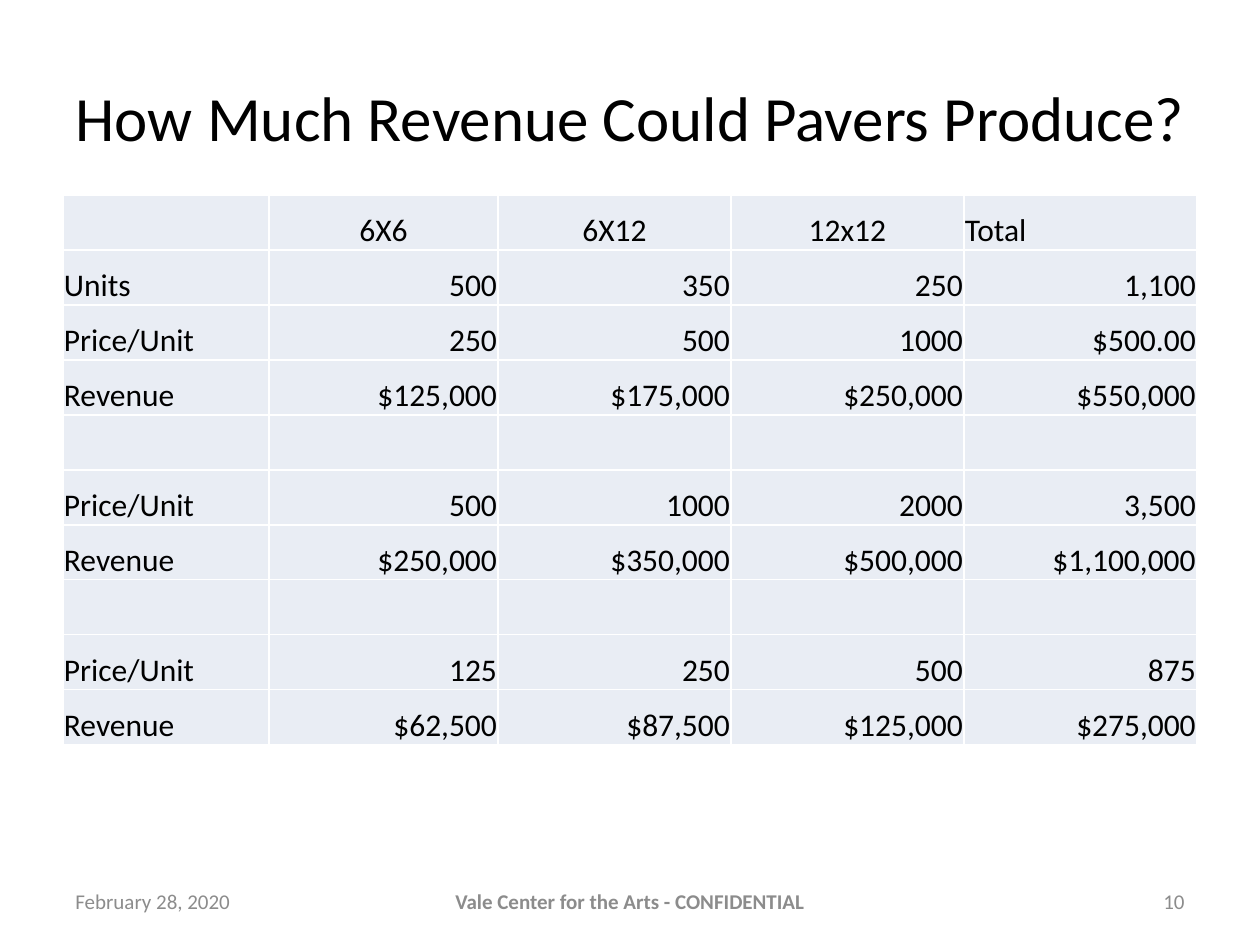
from lxml.etree import SubElement
from pptx import Presentation
from pptx.dml.color import RGBColor
from pptx.enum.text import MSO_ANCHOR, PP_ALIGN
from pptx.oxml.ns import qn
from pptx.util import Emu, Pt

FONT = "Calibri"
BLACK = RGBColor(0x00, 0x00, 0x00)
GRAY = RGBColor(0x8C, 0x8C, 0x8C)
PALE_BLUE = RGBColor(0xE9, 0xED, 0xF4)
WHITE = RGBColor(0xFF, 0xFF, 0xFF)


def px(length):
    return Emu(round(length * 914400 / 126))


def set_text(frame, text, size, color, align, bold=False):
    para = frame.paragraphs[0]
    para.text = text
    para.alignment = align
    para.font.size = Pt(size)
    for span in para.runs:
        span.font.name = FONT
        span.font.size = Pt(size)
        span.font.color.rgb = color
        span.font.bold = bold


deck = Presentation()
deck.slide_width, deck.slide_height = px(1260), px(945)
page = deck.slides.add_slide(deck.slide_layouts[6])
page.background.fill.solid()
page.background.fill.fore_color.rgb = WHITE

# Title and footer: left, top, width, height, text, size, color, alignment, bold
text_boxes = [
    (63, 38, 1134, 157, "How Much Revenue Could Pavers Produce?", 36, BLACK, PP_ALIGN.CENTER, False),
    (63, 876, 294, 50, "February 28, 2020", 12, GRAY, PP_ALIGN.LEFT, False),
    (357, 876, 546, 50, "Vale Center for the Arts - CONFIDENTIAL", 12, GRAY, PP_ALIGN.CENTER, True),
    (903, 876, 294, 50, "10", 12, GRAY, PP_ALIGN.RIGHT, False),
]
for left, top, width, height, text, size, color, align, bold in text_boxes:
    box = page.shapes.add_textbox(px(left), px(top), px(width), px(height))
    box.text_frame.word_wrap = True
    box.text_frame.vertical_anchor = MSO_ANCHOR.MIDDLE
    set_text(box.text_frame, text, size, color, align, bold)

# Revenue table: three price scenarios separated by empty rows
EMPTY_ROW = [""] * 5
rows = [
    ["", "6X6", "6X12", "12x12", "Total"],
    ["Units", "500", "350", "250", "1,100"],
    ["Price/Unit", "250", "500", "1000", "$500.00"],
    ["Revenue", "$125,000", "$175,000", "$250,000", "$550,000"],
    EMPTY_ROW,
    ["Price/Unit", "500", "1000", "2000", "3,500"],
    ["Revenue", "$250,000", "$350,000", "$500,000", "$1,100,000"],
    EMPTY_ROW,
    ["Price/Unit", "125", "250", "500", "875"],
    ["Revenue", "$62,500", "$87,500", "$125,000", "$275,000"],
]
column_widths = [206, 229, 233, 233, 233]
ROW_HEIGHT = 55

table = page.shapes.add_table(
    len(rows), len(column_widths), px(63), px(195),
    px(sum(column_widths)), px(ROW_HEIGHT * len(rows)),
).table
table.first_row = False
table.horz_banding = False
for column, width in zip(table.columns, column_widths):
    column.width = px(width)

for row_index, values in enumerate(rows):
    table.rows[row_index].height = px(ROW_HEIGHT)
    for column_index, value in enumerate(values):
        cell = table.cell(row_index, column_index)
        if column_index == 0 or value == "Total":
            align = PP_ALIGN.LEFT
        elif row_index == 0:
            align = PP_ALIGN.CENTER
        else:
            align = PP_ALIGN.RIGHT
        set_text(cell.text_frame, value, 18, BLACK, align)
        cell.vertical_anchor = MSO_ANCHOR.BOTTOM
        cell.margin_left = cell.margin_right = cell.margin_top = px(1)
        cell.margin_bottom = 0

        # Borders come before the fill in the cell properties
        properties = cell._tc.get_or_add_tcPr()
        for side in ("a:lnL", "a:lnR", "a:lnT", "a:lnB"):
            line = SubElement(properties, qn(side), w=str(Pt(1)))
            line_fill = SubElement(line, qn("a:solidFill"))
            SubElement(line_fill, qn("a:srgbClr"), val=str(WHITE))
        cell.fill.solid()
        cell.fill.fore_color.rgb = PALE_BLUE

deck.save("out.pptx")
